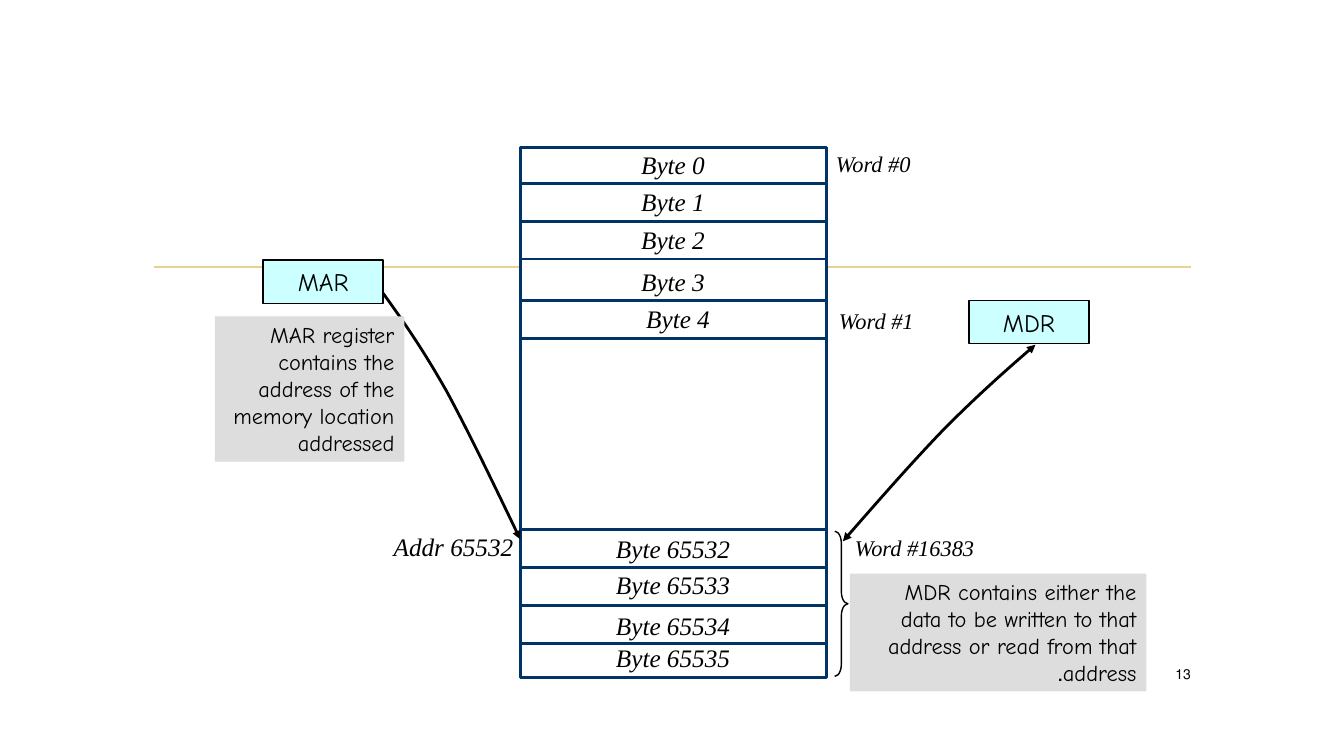
from lxml import etree
from pptx import Presentation
from pptx.dml.color import RGBColor
from pptx.enum.shapes import MSO_CONNECTOR, MSO_SHAPE
from pptx.enum.text import MSO_ANCHOR, MSO_AUTO_SIZE, PP_ALIGN
from pptx.oxml.ns import qn
from pptx.util import Pt

STRAIGHT = MSO_CONNECTOR.STRAIGHT
RECT, BRACE = MSO_SHAPE.RECTANGLE, MSO_SHAPE.RIGHT_BRACE
TOP, MIDDLE = MSO_ANCHOR.TOP, MSO_ANCHOR.MIDDLE
GROW, FIXED = MSO_AUTO_SIZE.SHAPE_TO_FIT_TEXT, MSO_AUTO_SIZE.NONE
RIGHT, CENTER = PP_ALIGN.RIGHT, PP_ALIGN.CENTER

EMU_PER_PX = 9144
SERIF, HAND = "Times New Roman", "Comic Neue"
COLORS = {
    "black": "000000",
    "white": "FFFFFF",
    "navy": "003366",
    "gold": "E8D191",
    "cyan": "CCFFFF",
    "gray": "DDDDDD",
}

BYTES = [
    ("Byte 0", 623, 143), ("Byte 1", 623, 180), ("Byte 2", 623, 218),
    ("Byte 3", 623, 259), ("Byte 4", 618, 296),
    ("Byte 65532", 598, 524), ("Byte 65533", 598, 560),
    ("Byte 65534", 598, 601), ("Byte 65535", 598, 632),
]
DIVIDERS = [
    (517, 182), (518, 220), (516, 257), (517, 298), (517, 336),
    (516, 525), (516, 563), (517, 601), (517, 638),
]
WORDS = [("Word #0", 816, 144, 97), ("Word #1", 819, 300, 97),
         ("Word #16383", 834, 525, 142)]
MAR_NOTE = ["MAR register", "contains the", "address of the",
            "memory location", "addressed"]
MDR_NOTE = ["MDR contains either the", "data to be written to that",
            "address or read from that", "address."]


def px(n):
    return round(n * EMU_PER_PX)


def color(name):
    return RGBColor.from_string(COLORS[name])


def write(sp, lines, size=18, font=SERIF, italic=False, align=RIGHT,
          anchor=TOP, wrap=False, fit=GROW):
    tf = sp.text_frame
    tf.word_wrap = wrap
    tf.auto_size = fit
    tf.vertical_anchor = anchor
    for i, line in enumerate(lines):
        p = tf.add_paragraph() if i else tf.paragraphs[0]
        p.alignment = align
        p._p.get_or_add_pPr().set("rtl", "1")
        r = p.add_run()
        r.text = line
        r.font.size = Pt(size)
        r.font.name = font
        r.font.italic = italic
        r.font.color.rgb = color("black")


def add_text(s, text, x, y, w, h, **fmt):
    write(s.shapes.add_textbox(px(x), px(y), px(w), px(h)), [text], **fmt)


def add_box(s, x, y, w, h, fill=None, line=None, weight=1, preset=RECT):
    sp = s.shapes.add_shape(preset, px(x), px(y), px(w), px(h))
    sp.shadow.inherit = False
    if fill:
        sp.fill.solid()
        sp.fill.fore_color.rgb = color(fill)
    else:
        sp.fill.background()
    if line:
        sp.line.color.rgb = color(line)
        sp.line.width = Pt(weight)
    else:
        sp.line.fill.background()
    return sp


def add_rule(s, x, y, w, line, weight):
    rule = s.shapes.add_connector(STRAIGHT, px(x), px(y), px(x + w), px(y))
    rule.line.color.rgb = color(line)
    rule.line.width = Pt(weight)
    etree.SubElement(rule._element.spPr, qn("a:effectLst"))


def add_curve(s, points, ends):
    builder = s.shapes.build_freeform(*points[0], scale=EMU_PER_PX)
    builder.add_line_segments(points[1:], close=False)
    sp = builder.convert_to_shape()
    sp.shadow.inherit = False
    sp.fill.background()
    sp.line.color.rgb = color("black")
    sp.line.width = Pt(2)
    for end in ends:
        etree.SubElement(sp.line._get_or_add_ln(), qn(end), type="triangle")
    outline = sp._element.find(".//" + qn("a:path"))
    segments = outline.findall(qn("a:lnTo"))
    for i in range(0, len(segments), 3):
        bezier = etree.SubElement(outline, qn("a:cubicBezTo"))
        for segment in segments[i:i + 3]:
            bezier.append(segment[0])
            outline.remove(segment)


def add_memory(s):
    add_box(s, 516, 146, 304, 526, "white", "navy", 2)
    for x, y in DIVIDERS:
        add_rule(s, x, y, 303, "navy", 2)
    for text, x, y in BYTES:
        add_text(s, text, x, y, 2 * (666 - x), 40, italic=True)
    for text, x, y, w in WORDS:
        add_text(s, text, x, y, w, 37, size=16, italic=True)
    add_text(s, "Addr 65532", 377, 522, 142, 40, italic=True)


def add_register(s, name, x, y):
    sp = add_box(s, x, y, 119, 43, "cyan", "black")
    write(sp, [name], font=HAND, align=CENTER, anchor=MIDDLE, fit=FIXED)


def add_note(s, lines, x, y, w, h):
    write(add_box(s, x, y, w, h, "gray"), lines, size=16, font=HAND)


def main():
    prs = Presentation()
    prs.slide_width, prs.slide_height = px(1333), px(750)
    s = prs.slides.add_slide(prs.slide_layouts[6])
    add_rule(s, 153, 265, 1028, "gold", 1.25)
    add_memory(s)
    add_register(s, "MAR", 261, 258)
    add_register(s, "MDR", 961, 298)
    add_curve(s, [(380, 291), (401, 320), (421, 349), (444, 390),
                  (466, 431), (491, 483), (516, 535)], ["a:tailEnd"])
    brace = add_box(s, 828, 527, 13, 144, line="black", preset=BRACE)
    brace.adjustments[0] = 0.93
    add_curve(s, [(836, 537), (871, 497), (906, 457), (938, 424),
                  (970, 392), (998, 367), (1027, 342)],
              ["a:headEnd", "a:tailEnd"])
    add_note(s, MAR_NOTE, 213, 314, 188, 144)
    add_note(s, MDR_NOTE, 843, 569, 294, 117)
    add_text(s, "13", 1132, 653, 59, 31, size=10, anchor=MIDDLE,
             wrap=True, fit=FIXED)
    prs.save("out.pptx")


if __name__ == "__main__":
    main()
